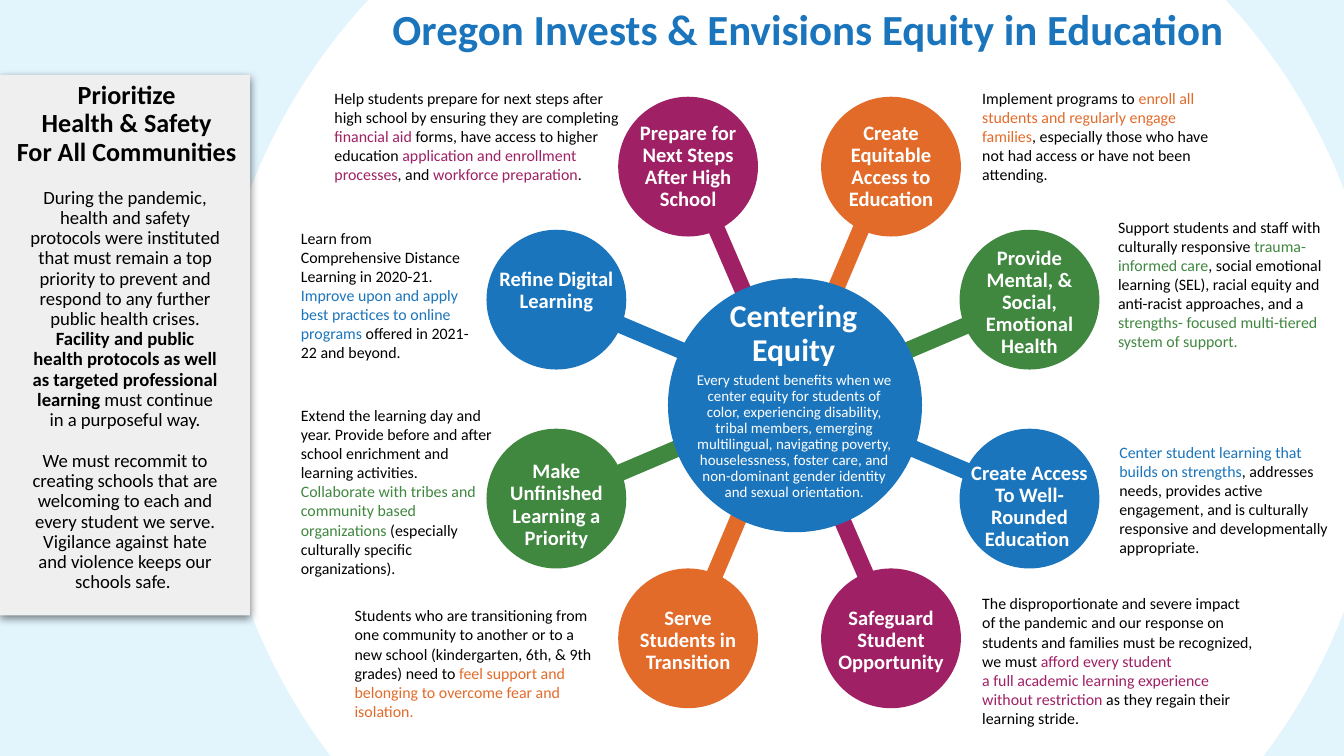
from lxml import etree
from pptx import Presentation, util as u
from pptx.dml.color import RGBColor
from pptx.enum import shapes, text
from pptx.oxml.ns import qn

PX = 9144  # one px is a hundredth of an inch
BLUE, GREEN, ORANGE, PURPLE = "1B75BC", "408740", "E26B2A", "9F2065"
BLACK, WHITE, SKY, GREY = "000000", "FFFFFF", "E2F4FC", "EFEFEF"
LEFT, CENTER = text.PP_ALIGN.LEFT, text.PP_ALIGN.CENTER

presentation = Presentation()
presentation.slide_width = u.Inches(10)
presentation.slide_height = u.Inches(5.625)
slide = presentation.slides.add_slide(presentation.slide_layouts[5])


def add_solid(preset, box, color):
    shape = slide.shapes.add_shape(preset, *[n * PX for n in box])
    shape.shadow.inherit = False
    shape.fill.solid()
    shape.fill.fore_color.rgb = RGBColor.from_string(color)
    shape.line.fill.background()
    return shape


def add_text(wording, box, size, color=BLACK, accent=None, bold=False,
             accent_bold=False, align=LEFT, spacing=1.0, gap=0, shape=None):
    """Runs between bars take the accent; each line is a paragraph."""
    box = [n * PX for n in box]
    shape = shape or slide.shapes.add_textbox(*box)
    shape.left, shape.top, shape.width, shape.height = box
    frame = shape.text_frame
    frame.word_wrap = True
    frame.auto_size = text.MSO_AUTO_SIZE.NONE
    frame.vertical_anchor = text.MSO_ANCHOR.TOP
    frame.margin_left = frame.margin_right = 10 * PX
    frame.margin_top = frame.margin_bottom = 10 * PX
    for index, line in enumerate(wording.split("\n")):
        paragraph = frame.add_paragraph() if index else frame.paragraphs[0]
        paragraph.alignment = align
        paragraph.line_spacing = spacing
        if index:
            paragraph.space_before = u.Pt(gap)
        for part, piece in enumerate(line.split("|")):
            if not piece:
                continue
            marked = part % 2 == 1
            run = paragraph.add_run()
            run.text = piece
            run.font.name = "Calibri"
            run.font.size = u.Pt(size)
            run.font.bold = bold or (marked and accent_bold)
            run.font.color.rgb = RGBColor.from_string(
                accent if marked and accent else color)


RECTANGLE, OVAL = shapes.MSO_SHAPE.RECTANGLE, shapes.MSO_SHAPE.OVAL

# Background
add_solid(RECTANGLE, (0, 0, 1000, 562.5), SKY)
add_solid(OVAL, (157, -139, 872, 874), WHITE)

# Spokes, each running through the hub
spokes = [
    (427, 227, 758, 367, BLUE),
    (435, 363, 750, 229, GREEN),
    (654, 139, 518, 460, ORANGE),
    (523, 147, 662, 469, PURPLE),
]
for x1, y1, x2, y2, color in spokes:
    spoke = slide.shapes.add_connector(
        shapes.MSO_CONNECTOR.STRAIGHT, x1 * PX, y1 * PX, x2 * PX, y2 * PX)
    spoke.line.color.rgb = RGBColor.from_string(color)
    spoke.line.width = u.Pt(9)
    etree.SubElement(spoke._element.spPr, qn("a:effectLst"))

# Hub
add_solid(OVAL, (497, 207, 189, 189), BLUE)
add_text("Centering Equity", (526, 213, 129, 72), 17, WHITE, bold=True,
         align=CENTER, spacing=0.9)
add_text("Every student benefits when we center equity for students of color, "
         "experiencing disability, tribal members, emerging multilingual, "
         "navigating poverty, houselessness, foster care, and non-dominant "
         "gender identity and sexual orientation.",
         (507, 267, 168, 129), 8, WHITE, align=CENTER, spacing=0.9)

# Topics: circle left and top, color, label, label top and height,
# description box, description
topics = [
    (362, 171, BLUE, "Refine Digital Learning", 190, 54, (214, 160, 145, 120),
     "Learn from Comprehensive Distance Learning in 2020-21. |Improve upon and "
     "apply best practices to online programs| offered in 2021-22 and beyond."),
    (362, 319, GREEN, "Make Unfinished Learning a Priority", 333, 87,
     (214, 292, 162, 149),
     "Extend the learning day and year. Provide before and after school "
     "enrichment and learning activities. |Collaborate with tribes and community "
     "based organizations| (especially culturally specific organizations)."),
    (460, 423, ORANGE, "Serve Students in Transition", 442, 70,
     (254, 441, 201, 106),
     "Students who are transitioning from one community to another or to a new "
     "school (kindergarten, 6th, & 9th grades) need to |feel support and "
     "belonging to overcome fear and isolation."),
    (460, 72, PURPLE, "Prepare for Next Steps After High School", 81, 87,
     (239, 56, 239, 92),
     "Help students prepare for next steps after high school by ensuring they "
     "are completing |financial aid| forms, have access to higher education "
     "|application and enrollment processes|, and |workforce preparation|."),
    (714, 171, GREEN, "Provide Mental, & Social, Emotional Health", 174, 104,
     (822, 152, 175, 135),
     "Support students and staff with culturally responsive |trauma-informed "
     "care|, social emotional learning (SEL), racial equity and anti-racist "
     "approaches, and a |strengths- focused multi-tiered system of support."),
    (714, 319, BLUE, "Create Access To Well-Rounded Education ", 334, 87,
     (823, 319, 178, 106),
     "|Center student learning that builds on strengths|, addresses needs, "
     "provides active engagement, and is culturally responsive and "
     "developmentally appropriate."),
    (611, 423, PURPLE, "Safeguard Student Opportunity", 442, 70,
     (721, 432, 224, 135),
     "The disproportionate and severe impact of the pandemic and our response on "
     "students and families must be recognized, we must |afford every student\n"
     "|a full academic learning experience without restriction| as they regain "
     "their learning stride."),
    (611, 72, ORANGE, "Create Equitable Access to Education", 81, 87,
     (721, 56, 201, 92),
     "Implement programs to |enroll all students and regularly engage families|, "
     "especially those who have not had access or have not been attending."),
]
for left, top, color, label, label_top, height, box, description in topics:
    add_solid(OVAL, (left, top, 104, 104), color)
    add_text(label, (left - 4, label_top, 112, height), 11, WHITE, bold=True,
             align=CENTER, spacing=0.9)
    add_text(description, box, 8.5, accent=color)

# Side panel with a soft shadow below
panel = add_solid(RECTANGLE, (0, 56, 186, 402), GREY)
effects = panel._element.spPr.find(qn("a:effectLst"))
shadow = etree.SubElement(effects, qn("a:outerShdw"), blurRad="57150",
                          dist="19050", dir="5400000", algn="bl", rotWithShape="0")
shade = etree.SubElement(shadow, qn("a:srgbClr"), val=BLACK)
etree.SubElement(shade, qn("a:alpha"), val="50000")
add_text("Prioritize \nHealth & Safety \nFor All Communities ",
         (0, 51, 193, 84), 14, bold=True, align=CENTER, spacing=0.9)
add_text("During the pandemic, health and safety protocols were instituted that "
         "must remain a top priority to prevent and respond to any further public "
         "health crises. |Facility and public health protocols as well as targeted "
         "professional learning| must continue in a purposeful way.\n"
         "We must recommit to creating schools that are welcoming to each and "
         "every student we serve. Vigilance against hate and violence keeps our "
         "schools safe. ",
         (12, 130, 162, 338), 10, accent_bold=True, align=CENTER, spacing=0.9,
         gap=11)

# Title, brought in front of the background
title = slide.shapes.title
add_text("Oregon Invests & Envisions Equity in Education", (282, -8, 703, 59),
         23, BLUE, bold=True, shape=title)
slide.shapes.element.append(title._element)

presentation.save("out.pptx")
